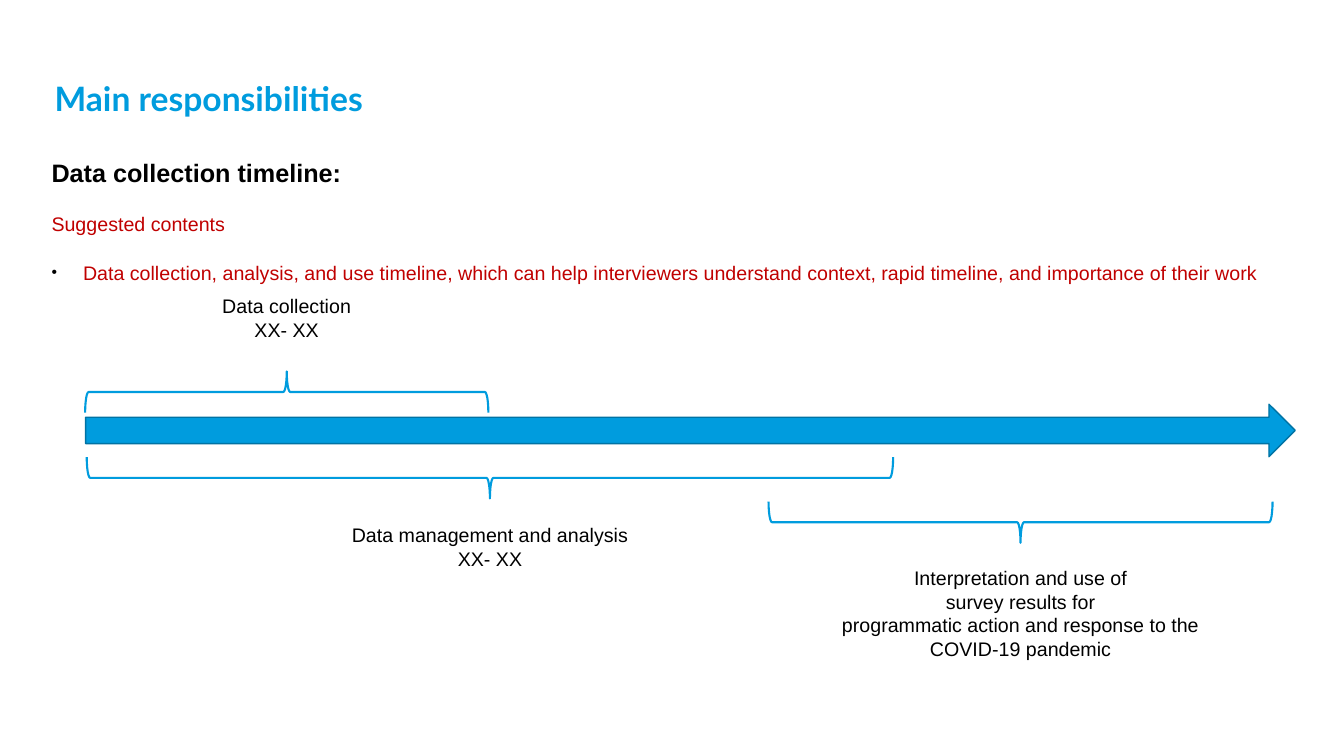
from pptx import Presentation
from pptx.dml.color import RGBColor
from pptx.enum.shapes import MSO_SHAPE as Shape
from pptx.enum.text import MSO_ANCHOR as Anchor, MSO_AUTO_SIZE as AutoSize, PP_ALIGN as Align
from pptx.oxml import parse_xml
from pptx.oxml.ns import nsdecls
from pptx.util import Pt

BLUE = RGBColor(0x00, 0x9C, 0xDE)
DARK_BLUE = RGBColor(0x00, 0x73, 0xA4)
RED = RGBColor(0xC0, 0x00, 0x00)
BLACK = RGBColor(0x00, 0x00, 0x00)


def place(shape, left, top, width, height):
    shape.left, shape.top = Pt(left), Pt(top)
    shape.width, shape.height = Pt(width), Pt(height)


def set_font(font, name, size, color, bold=False):
    font.name, font.size, font.bold = name, Pt(size), bold
    font.color.rgb = color


presentation = Presentation()
presentation.slide_width, presentation.slide_height = Pt(960), Pt(540)
slide = presentation.slides.add_slide(presentation.slide_layouts[1])

title = slide.shapes.title
place(title, 37.5, 28, 642, 57)
title_frame = title.text_frame
title_frame.text = "Main responsibilities"
title_frame.vertical_anchor = Anchor.BOTTOM
title_frame.auto_size = AutoSize.NONE
title_frame.margin_left, title_frame.margin_right = Pt(1.5), Pt(28)
title_frame.margin_top = title_frame.margin_bottom = 0
title_paragraph = title_frame.paragraphs[0]
title_paragraph.alignment = Align.LEFT
title_paragraph.line_spacing = 0.9
set_font(title_paragraph.runs[0].font, "Lato", 24, BLUE, True)

body = slide.placeholders[1]
place(body, 35.3, 110.2, 884, 333.4)
body_frame = body.text_frame
body_frame.text = "\n".join([
    "Data collection timeline:",
    "Suggested contents",
    "Data collection, analysis, and use timeline, which can help interviewers "
    "understand context, rapid timeline, and importance of their work",
])
body_frame.auto_size = AutoSize.NONE
body_frame.margin_left = body_frame.margin_right = Pt(1.5)
body_frame.margin_top = body_frame.margin_bottom = 0
body_styles = [(18, BLACK, True, False), (14, RED, False, False), (14, RED, False, True)]
for index, (size, color, bold, bulleted) in enumerate(body_styles):
    paragraph = body_frame.paragraphs[index]
    paragraph.line_spacing = 1.1
    paragraph.space_before = Pt(10 if index else 0)
    paragraph.space_after = Pt(6)
    properties = paragraph._p.get_or_add_pPr()
    indent = Pt(22.5) if bulleted else 0
    properties.set("marL", str(indent))
    properties.set("indent", str(-indent))
    if bulleted:
        properties.append(parse_xml(f'<a:buClr {nsdecls("a")}><a:srgbClr val="{BLACK}"/></a:buClr>'))
        properties.append(parse_xml(f'<a:buSzPct {nsdecls("a")} val="80000"/>'))
        properties.append(parse_xml(f'<a:buFont {nsdecls("a")} typeface="Arial"/>'))
        properties.append(parse_xml(f'<a:buChar {nsdecls("a")} char="•"/>'))
    else:
        properties.append(parse_xml(f'<a:buNone {nsdecls("a")}/>'))
    set_font(paragraph.runs[0].font, "Arial", size, color, bold)

arrow = slide.shapes.add_shape(Shape.RIGHT_ARROW, Pt(61.2), Pt(288.7), Pt(864), Pt(37.5))
arrow.shadow.inherit = False
arrow.fill.solid()
arrow.fill.fore_color.rgb = BLUE
arrow.line.color.rgb = DARK_BLUE
arrow.line.width = Pt(1)

BRACE_DEPTH = 29.5
phases = [
    ("Data collection\nXX- XX", 204.8, 280, 288, 90, 206.6, 107.3, 41, False),
    ("Data management and analysis\nXX- XX", 350, 341.3, 576, 270, 370, 212.4, 41, False),
    ("Interpretation and use of\nsurvey results for\n"
     "programmatic action and response to the COVID-19 pandemic",
     729, 373, 360, 270, 401, 301, 75, True),
]
for text, center, middle, length, rotation, label_top, label_width, label_height, wrap in phases:
    brace = slide.shapes.add_shape(
        Shape.LEFT_BRACE, Pt(center - BRACE_DEPTH / 2), Pt(middle - length / 2),
        Pt(BRACE_DEPTH), Pt(length))
    brace.rotation = rotation
    brace.shadow.inherit = False
    brace.fill.background()
    brace.line.color.rgb = BLUE
    brace.line.width = Pt(1.5)

    label = slide.shapes.add_textbox(
        Pt(center - label_width / 2), Pt(label_top), Pt(label_width), Pt(label_height))
    label.text_frame.text = text
    label.text_frame.word_wrap = wrap
    label.text_frame.auto_size = AutoSize.SHAPE_TO_FIT_TEXT
    for paragraph in label.text_frame.paragraphs:
        paragraph.alignment = Align.CENTER
        set_font(paragraph.runs[0].font, "Arial", 14, BLACK)

presentation.save("out.pptx")
